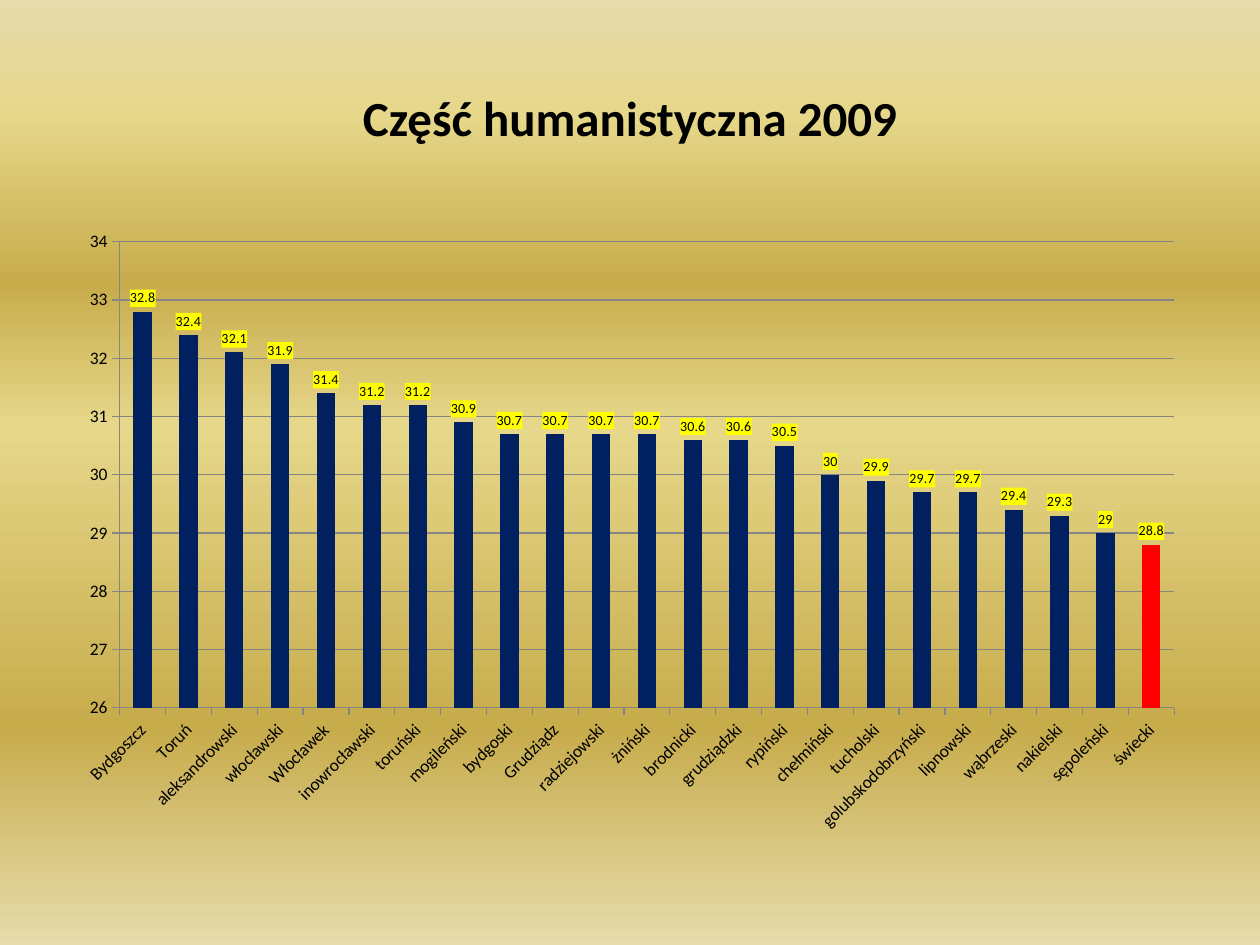
from lxml import etree
from pptx import Presentation
from pptx import util as u
from pptx.chart.data import CategoryChartData
from pptx.dml.color import RGBColor
from pptx.enum import chart as ch, text
from pptx.oxml import parse_xml
from pptx.oxml.ns import nsdecls, qn

PX_PER_INCH = 126
FONT = "Calibri"
GRID = "868686"
BACKGROUND_STOPS = [(0, "E6DCAC"), (12, "E6D78A"), (30, "C7AC4C"),
                    (45, "E6D78A"), (77, "C7AC4C"), (100, "E6DCAC")]
RESULTS = [
    ("Bydgoszcz", 32.8), ("Toruń", 32.4), ("aleksandrowski", 32.1),
    ("włocławski", 31.9), ("Włocławek", 31.4), ("inowrocławski", 31.2),
    ("toruński", 31.2), ("mogileński", 30.9), ("bydgoski", 30.7),
    ("Grudziądz", 30.7), ("radziejowski", 30.7), ("żniński", 30.7),
    ("brodnicki", 30.6), ("grudziądzki", 30.6), ("rypiński", 30.5),
    ("chełmiński", 30), ("tucholski", 29.9), ("golubskodobrzyński", 29.7),
    ("lipnowski", 29.7), ("wąbrzeski", 29.4), ("nakielski", 29.3),
    ("sępoleński", 29), ("świecki", 28.8),
]


def px(length):
    return u.Emu(round(length * 914400 / PX_PER_INCH))


def color(value):
    return RGBColor.from_string(value)


def set_font(font, size, bold=False):
    font.name = FONT
    font.size = u.Pt(size)
    font.bold = bold
    font.color.rgb = color("000000")


def paint_background(slide):
    slide.background.fill.gradient()
    gradient = slide.element.find(".//" + qn("a:gradFill"))
    for child in list(gradient):
        gradient.remove(child)
    stops = etree.SubElement(gradient, qn("a:gsLst"))
    for position, value in BACKGROUND_STOPS:
        stop = etree.SubElement(stops, qn("a:gs"), pos=str(position * 1000))
        etree.SubElement(stop, qn("a:srgbClr"), val=value)
    etree.SubElement(gradient, qn("a:lin"), ang="5400000", scaled="0")


def add_title(slide, wording):
    box = slide.shapes.add_textbox(px(63), px(38), px(1134), px(157))
    frame = box.text_frame
    frame.word_wrap = True
    frame.vertical_anchor = text.MSO_ANCHOR.MIDDLE
    para = frame.paragraphs[0]
    para.text = wording
    para.alignment = text.PP_ALIGN.CENTER
    set_font(para.font, 28, bold=True)


def style_axis(axis):
    axis.major_tick_mark = ch.XL_TICK_MARK.OUTSIDE
    axis.minor_tick_mark = ch.XL_TICK_MARK.NONE
    axis.format.line.color.rgb = color(GRID)
    set_font(axis.tick_labels.font, 10)


def place_plot(chart, **fractions):
    """Fix the inner plot area, as fractions of the chart."""
    area = chart.element.find(".//" + qn("c:plotArea"))
    for layout in area.findall(qn("c:layout")):
        area.remove(layout)
    sizes = "".join(f'<c:{key} val="{value}"/>'
                    for key, value in fractions.items())
    area.insert(0, parse_xml(
        f'<c:layout {nsdecls("c")}><c:manualLayout>'
        '<c:layoutTarget val="inner"/><c:xMode val="edge"/>'
        f'<c:yMode val="edge"/>{sizes}</c:manualLayout></c:layout>'))


def add_value_labels(plot):
    plot.has_data_labels = True
    labels = plot.data_labels
    labels.show_value = True
    labels.position = ch.XL_LABEL_POSITION.OUTSIDE_END
    set_font(labels.font, 8)
    # Yellow box behind each value
    text_style = plot.series[0].data_labels
    text_style.show_value = True
    text_style.position = ch.XL_LABEL_POSITION.OUTSIDE_END
    set_font(text_style.font, 8)
    for properties in plot._element.iter(qn("c:dLbls")):
        properties.find(qn("c:txPr")).addprevious(parse_xml(
            f'<c:spPr {nsdecls("c", "a")}><a:solidFill>'
            '<a:srgbClr val="FFFF00"/></a:solidFill></c:spPr>'))


def add_results_chart(slide):
    data = CategoryChartData()
    data.categories = [name for name, _ in RESULTS]
    data.add_series("Series 1", [score for _, score in RESULTS])
    chart = slide.shapes.add_chart(
        ch.XL_CHART_TYPE.COLUMN_CLUSTERED,
        px(63), px(220), px(1134), px(624), data).chart
    chart.has_legend = False
    chart.has_title = False
    set_font(chart.font, 10)
    place_plot(chart, x=0.05, y=0.035, w=0.93, h=0.747)

    # Axes
    for axis in (chart.category_axis, chart.value_axis):
        style_axis(axis)
    scores = chart.value_axis
    scores.minimum_scale, scores.maximum_scale = 26, 34
    scores.major_unit = 1
    scores.has_major_gridlines = True
    scores.major_gridlines.format.line.color.rgb = color(GRID)
    names = chart.category_axis._element.find(qn("c:txPr"))
    names.find(qn("a:bodyPr")).set("rot", "-2700000")

    # Columns, with the last district picked out
    plot = chart.plots[0]
    plot.gap_width = 150
    plot.vary_by_categories = False
    series = plot.series[0]
    series.invert_if_negative = False
    last_column = series.points[len(RESULTS) - 1]
    for part, value in ((series, "002060"), (last_column, "FF0000")):
        part.format.fill.solid()
        part.format.fill.fore_color.rgb = color(value)
    add_value_labels(plot)


def main():
    deck = Presentation()
    deck.slide_width, deck.slide_height = px(1260), px(945)
    page = deck.slides.add_slide(deck.slide_layouts[6])
    paint_background(page)
    add_title(page, "Część humanistyczna 2009")
    add_results_chart(page)
    deck.save("out.pptx")


if __name__ == "__main__":
    main()
